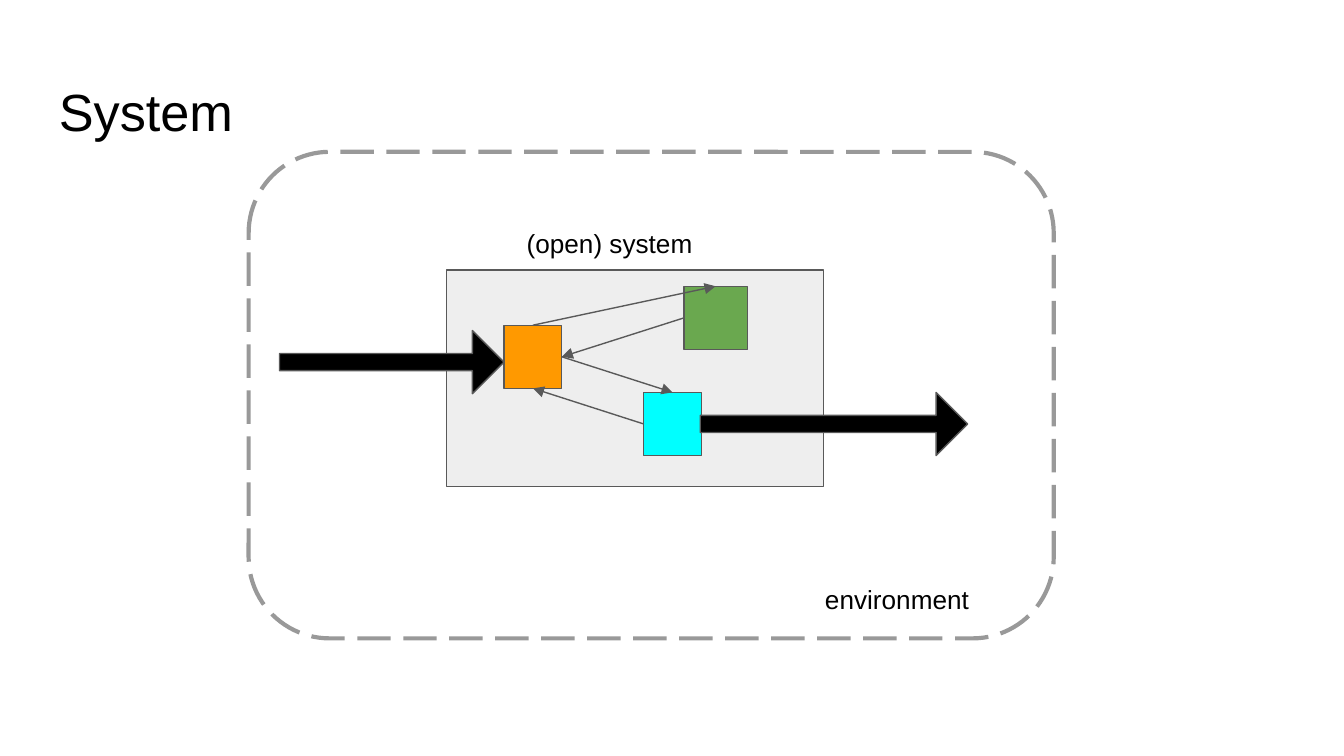
from dataclasses import dataclass

from pptx import Presentation
from pptx.dml.color import RGBColor
from pptx.enum.dml import MSO_LINE
from pptx.enum.shapes import MSO_CONNECTOR, MSO_SHAPE
from pptx.enum.text import MSO_ANCHOR
from pptx.oxml.ns import qn
from pptx.shapes.autoshape import Shape
from pptx.slide import Slide
from pptx.util import Inches, Pt
from lxml import etree

RECTANGLE = MSO_SHAPE.RECTANGLE
ROUNDED = MSO_SHAPE.ROUNDED_RECTANGLE
RIGHT_ARROW = MSO_SHAPE.RIGHT_ARROW
STRAIGHT = MSO_CONNECTOR.STRAIGHT
LONG_DASH = MSO_LINE.LONG_DASH
TOP_ANCHOR = MSO_ANCHOR.TOP
TOP, LEFT, BOTTOM, RIGHT = range(4)


@dataclass(frozen=True)
class Theme:
    font: str = "Arial"
    title_size: float = 28
    label_size: float = 14
    inset: float = 0.1
    thin: float = 0.75
    thick: float = 2.25
    text: str = "000000"
    outline: str = "595959"
    boundary: str = "999999"
    system: str = "EEEEEE"
    orange: str = "FF9900"
    cyan: str = "00FFFF"
    green: str = "6AA84F"
    flow: str = "000000"


@dataclass(frozen=True)
class Box:
    left: float
    top: float
    width: float
    height: float

    def lengths(self) -> list[Inches]:
        return [Inches(n) for n in (self.left, self.top, self.width, self.height)]


@dataclass(frozen=True)
class Label:
    text: str
    box: Box
    size: float


@dataclass(frozen=True)
class Link:
    source: str
    source_side: int
    target: str
    target_side: int


THEME = Theme()

PARTS = {
    "orange": (Box(3.75, 2.42, 0.43, 0.47), THEME.orange),
    "cyan": (Box(4.79, 2.92, 0.43, 0.47), THEME.cyan),
    "green": (Box(5.09, 2.13, 0.47, 0.47), THEME.green),
}
LINKS = [
    Link("orange", RIGHT, "cyan", TOP),
    Link("cyan", LEFT, "orange", BOTTOM),
    Link("orange", TOP, "green", TOP),
    Link("green", LEFT, "orange", RIGHT),
]
FLOWS = [Box(2.08, 2.46, 1.67, 0.47), Box(5.21, 2.92, 1.99, 0.47)]
LABELS = [
    Label("System", Box(0.34, 0.49, 9.32, 0.63), THEME.title_size),
    Label("environment", Box(6.04, 4.24, 1.5, 0.39), THEME.label_size),
    Label("(open) system", Box(3.82, 1.59, 1.63, 0.29), THEME.label_size),
]


def add_filled(slide: Slide, kind: MSO_SHAPE, box: Box, fill: str) -> Shape:
    shape = slide.shapes.add_shape(kind, *box.lengths())
    shape.shadow.inherit = False
    shape.fill.solid()
    shape.fill.fore_color.rgb = RGBColor.from_string(fill)
    shape.line.color.rgb = RGBColor.from_string(THEME.outline)
    shape.line.width = Pt(THEME.thin)
    return shape


def add_boundary(slide: Slide, box: Box) -> None:
    shape = slide.shapes.add_shape(ROUNDED, *box.lengths())
    shape.shadow.inherit = False
    shape.fill.background()
    shape.line.color.rgb = RGBColor.from_string(THEME.boundary)
    shape.line.width = Pt(THEME.thick)
    shape.line.dash_style = LONG_DASH


def add_flow(slide: Slide, box: Box) -> None:
    arrow = add_filled(slide, RIGHT_ARROW, box, THEME.flow)
    arrow.adjustments[0] = 0.27


def add_link(slide: Slide, link: Link, parts: dict[str, Shape]) -> None:
    connector = slide.shapes.add_connector(STRAIGHT, 0, 0, 0, 0)
    connector.begin_connect(parts[link.source], link.source_side)
    connector.end_connect(parts[link.target], link.target_side)
    connector.line.color.rgb = RGBColor.from_string(THEME.outline)
    connector.line.width = Pt(THEME.thin)
    etree.SubElement(connector.line._get_or_add_ln(), qn("a:tailEnd"), type="triangle")
    etree.SubElement(connector._element.spPr, qn("a:effectLst"))


def add_label(slide: Slide, label: Label) -> None:
    frame = slide.shapes.add_textbox(*label.box.lengths()).text_frame
    frame.word_wrap = True
    frame.vertical_anchor = TOP_ANCHOR
    frame.margin_left = frame.margin_right = Inches(THEME.inset)
    frame.margin_top = frame.margin_bottom = Inches(THEME.inset)
    run = frame.paragraphs[0].add_run()
    run.text = label.text
    run.font.name = THEME.font
    run.font.size = Pt(label.size)
    run.font.color.rgb = RGBColor.from_string(THEME.text)


def main() -> None:
    # Widescreen slide, 16 by 9
    presentation = Presentation()
    presentation.slide_width = Inches(10)
    presentation.slide_height = Inches(10 * 9 / 16)
    slide = presentation.slides.add_slide(presentation.slide_layouts[6])

    # Environment and the system inside it
    add_boundary(slide, Box(1.85, 1.13, 5.99, 3.62))
    add_filled(slide, RECTANGLE, Box(3.32, 2.01, 2.81, 1.61), THEME.system)

    # Interacting parts of the system
    parts = {
        name: add_filled(slide, RECTANGLE, box, fill)
        for name, (box, fill) in PARTS.items()
    }
    for link in LINKS:
        add_link(slide, link, parts)

    # Input and output
    for flow in FLOWS:
        add_flow(slide, flow)

    # Title and captions
    for label in LABELS:
        add_label(slide, label)

    presentation.save("out.pptx")


if __name__ == "__main__":
    main()
